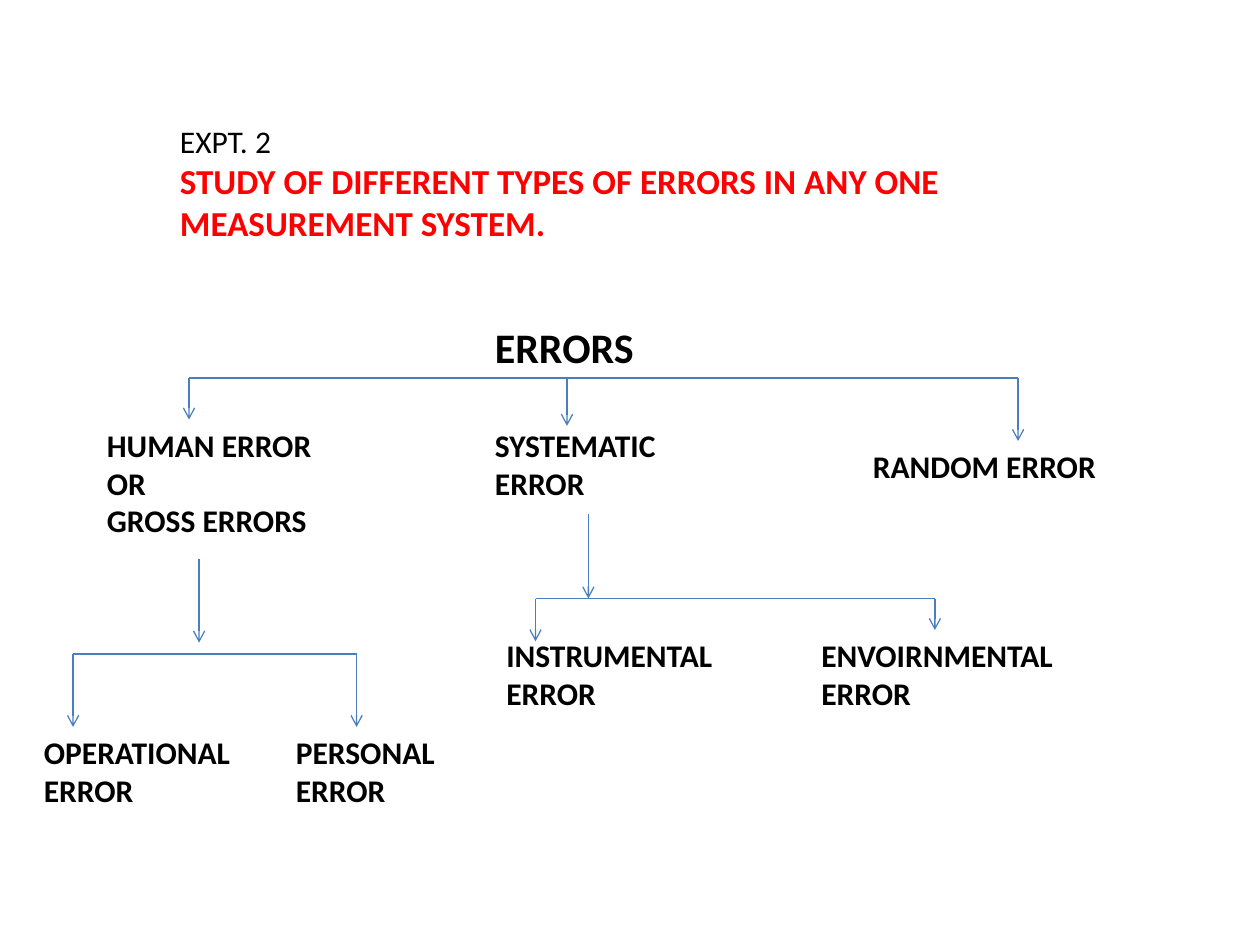
from lxml.etree import SubElement
from pptx import Presentation
from pptx.dml.color import RGBColor
from pptx.enum.shapes import MSO_CONNECTOR
from pptx.enum.text import MSO_AUTO_SIZE
from pptx.oxml.ns import qn
from pptx.util import Inches, Pt

BLACK = RGBColor(0x00, 0x00, 0x00)
RED = RGBColor(0xFF, 0x00, 0x00)
LINE_BLUE = RGBColor(0x4B, 0x7E, 0xBC)
FONT = "Calibri"


def add_text(slide, box, lines):
    """Write one paragraph per (text, size, colour, bold) line; box is in inches."""
    shape = slide.shapes.add_textbox(*(Inches(length) for length in box))
    frame = shape.text_frame
    frame.word_wrap = True
    frame.auto_size = MSO_AUTO_SIZE.SHAPE_TO_FIT_TEXT
    for index, (text, size, colour, bold) in enumerate(lines):
        paragraph = frame.add_paragraph() if index else frame.paragraphs[0]
        run = paragraph.add_run()
        run.text = text
        run.font.name = FONT
        run.font.size = Pt(size)
        run.font.bold = bold
        run.font.color.rgb = colour


def add_label(slide, box, *texts, size=18):
    add_text(slide, box, [(text, size, BLACK, True) for text in texts])


def add_line(slide, start, end, arrow=False):
    points = (Inches(length) for length in (*start, *end))
    connector = slide.shapes.add_connector(MSO_CONNECTOR.STRAIGHT, *points)
    connector.line.color.rgb = LINE_BLUE
    connector.line.width = Pt(0.75)
    if arrow:
        SubElement(connector.line._get_or_add_ln(), qn("a:tailEnd"), type="arrow")
    SubElement(connector._element.spPr, qn("a:effectLst"))


def add_branches(slide, top, tips):
    """Draw a horizontal bar at top with an arrow down to each (x, y) tip."""
    add_line(slide, (tips[0][0], top), (tips[-1][0], top))
    for x, y in tips:
        add_line(slide, (x, top), (x, y), arrow=True)


def add_heading(slide, box):
    title = "STUDY OF DIFFERENT TYPES OF ERRORS IN ANY ONE MEASUREMENT SYSTEM."
    add_text(slide, box, [("EXPT. 2", 18, BLACK, False), (title, 20, RED, True)])


def add_main_errors(slide, left, top):
    add_label(slide, (left + 3.08, top, 1.67, 0.5), "ERRORS", size=24)
    add_branches(slide, top + 0.5, [(left + 0.75, top + 0.83),
                                    (left + 3.75, top + 0.88),
                                    (left + 7.33, top + 1)])
    add_label(slide, (left, top + 0.83, 2.08, 1.01), "HUMAN ERROR OR", "GROSS ERRORS")
    add_label(slide, (left + 3.08, top + 0.83, 2.08, 0.71), "SYSTEMATIC ERROR")
    add_label(slide, (left + 6.08, top + 1, 2.08, 0.4), "RANDOM ERROR")


def add_human_errors(slide, left, top):
    add_line(slide, (left + 1.33, top), (left + 1.33, top + 0.66), arrow=True)
    add_branches(slide, top + 0.75, [(left + 0.33, top + 1.33), (left + 2.58, top + 1.33)])
    add_label(slide, (left, top + 1.33, 1.75, 0.71), "OPERATIONAL ERROR")
    add_label(slide, (left + 2, top + 1.33, 1.33, 0.71), "PERSONAL ERROR")


def add_systematic_errors(slide, left, top):
    add_line(slide, (left + 0.75, top), (left + 0.75, top + 0.67), arrow=True)
    add_branches(slide, top + 0.67, [(left + 0.33, top + 1.01), (left + 3.5, top + 0.92)])
    add_label(slide, (left, top + 0.92, 2, 0.71), "INSTRUMENTAL ERROR")
    add_label(slide, (left + 2.5, top + 0.92, 2.08, 0.71), "ENVOIRNMENTAL ERROR")


def main():
    presentation = Presentation()
    presentation.slide_width = Inches(10)
    presentation.slide_height = Inches(7.5)
    slide = presentation.slides.add_slide(presentation.slide_layouts[6])
    add_heading(slide, (1.33, 0.92, 7.67, 1.08))
    add_main_errors(slide, 0.75, 2.5)
    add_human_errors(slide, 0.25, 4.44)
    add_systematic_errors(slide, 3.92, 4.08)
    presentation.save("out.pptx")


if __name__ == "__main__":
    main()
